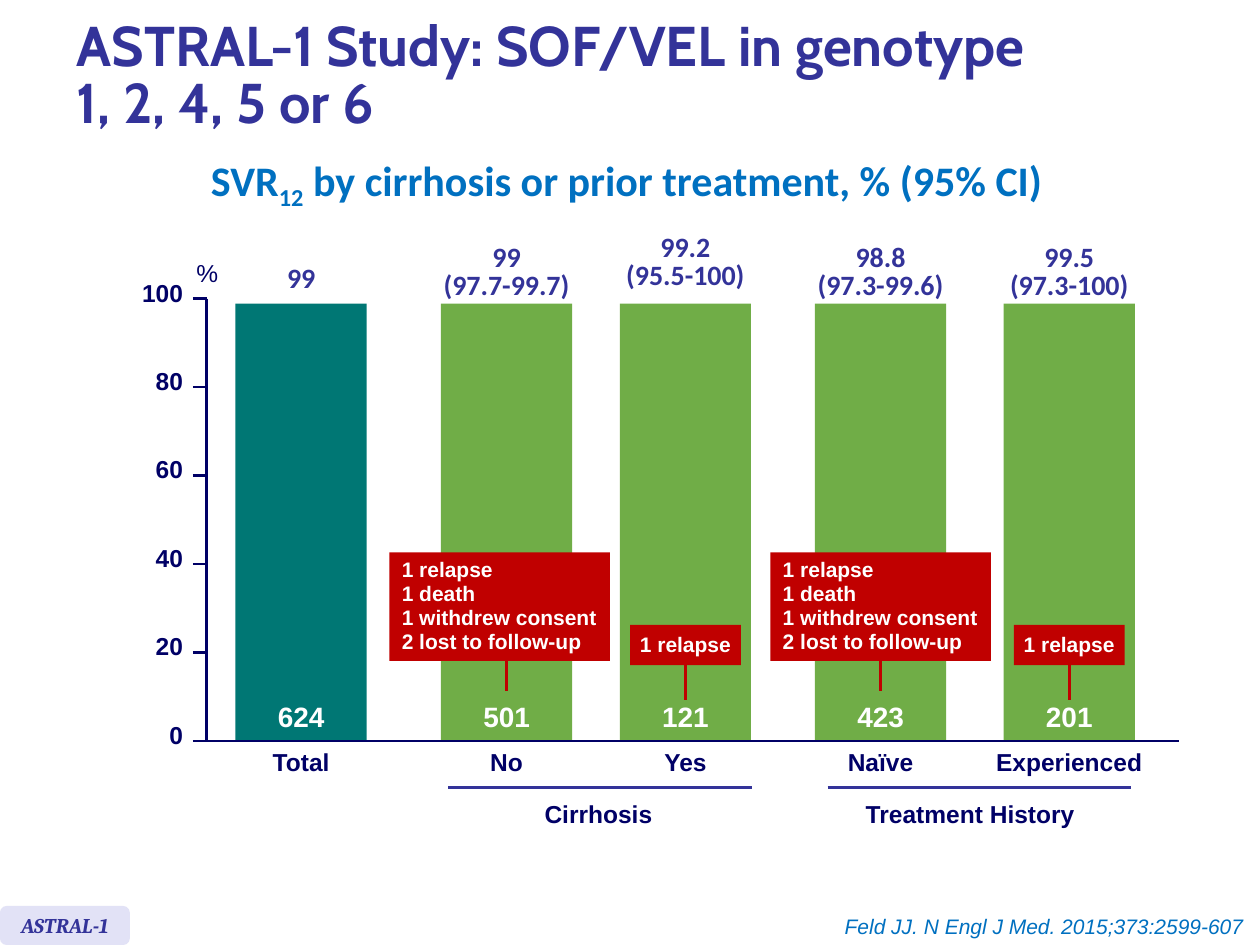
"""Builds the ASTRAL-1 slide with SVR12 bars by cirrhosis and prior treatment."""
from lxml import etree
from pptx import Presentation
from pptx.dml.color import RGBColor
from pptx.enum.shapes import MSO_CONNECTOR, MSO_SHAPE
from pptx.enum.text import MSO_ANCHOR, PP_ALIGN
from pptx.oxml.ns import qn
from pptx.util import Pt

LEFT, CENTER, RIGHT = PP_ALIGN.LEFT, PP_ALIGN.CENTER, PP_ALIGN.RIGHT
MIDDLE = MSO_ANCHOR.MIDDLE
RECTANGLE, ROUNDED = MSO_SHAPE.RECTANGLE, MSO_SHAPE.ROUNDED_RECTANGLE
STRAIGHT = MSO_CONNECTOR.STRAIGHT
NAVY, INDIGO, BLUE, RED = "000066", "333399", "0070C0", "C00000"
TEAL, GREEN, LAVENDER, WHITE = "007774", "70AD47", "E2E2F6", "FFFFFF"


def color(hex_value):
    return RGBColor.from_string(hex_value)


def write(box, text, size, ink, font="Arial", align=CENTER, spacing=None,
          bold=True, italic=False, margin=0):
    frame = box.text_frame
    frame.word_wrap = False
    frame.margin_left = frame.margin_right = Pt(margin)
    frame.margin_top = frame.margin_bottom = Pt(margin)
    frame.text = text
    for para in frame.paragraphs:
        para.alignment = align
        para.line_spacing = spacing
        for span in para.runs:
            span.font.name, span.font.size = font, Pt(size)
            span.font.bold, span.font.italic = bold, italic
            span.font.color.rgb = color(ink)
    return frame


deck = Presentation()
deck.slide_width, deck.slide_height = Pt(720), Pt(540)
page = deck.slides.add_slide(deck.slide_layouts[5])
shapes = page.shapes

title = shapes.title
title.left, title.top, title.width, title.height = Pt(36.7), Pt(5.8), Pt(657.4), Pt(77)
frame = write(title, "ASTRAL-1 Study: SOF/VEL in genotype\v1, 2, 4, 5 or 6", 32, INDIGO,
              "Cabin", LEFT, 0.85)
frame.word_wrap = True
frame.margin_left = frame.margin_right = Pt(7.2)
frame.vertical_anchor = MIDDLE

heading = shapes.add_textbox(Pt(109.4), Pt(102.2), Pt(497.5), Pt(25.2))
frame = write(heading, "SVR", 24, BLUE, "Calibri", spacing=Pt(15.2), margin=3.6)
para = frame.paragraphs[0]
for text, baseline in (("12", "-25000"), (" by cirrhosis or prior treatment, % (95% CI)", "0")):
    span = para.add_run()
    span.text = text
    span.font.name, span.font.size, span.font.bold = "Calibri", Pt(24), True
    span.font.color.rgb = color(BLUE)
    span._r.get_or_add_rPr().set("baseline", baseline)

AXIS_X, AXIS_TOP, AXIS_BOTTOM, AXIS_END, TICK = 118.1, 170.6, 423.4, 673.9, 7.9
BAR_WIDTH, BAR_TOP = 75, 173.5
CATEGORY_WIDTH, GROUP_WIDTH = 92, 130
LONG_NOTE = "1 relapse\n1 death\n1 withdrew consent\n2 lost to follow-up"
SHORT_NOTE = "1 relapse"

bars = [
    ("Total", 172.1, TEAL, "99", 149, "624", None, 0),
    ("No", 289.5, GREEN, "99\n(97.7-99.7)", 139.7, "501", LONG_NOTE, -4),
    ("Yes", 391.7, GREEN, "99.2\n(95.5-100)", 133.9, "121", SHORT_NOTE, 0),
    ("Naïve", 503.2, GREEN, "98.8\n(97.3-99.6)", 139.7, "423", LONG_NOTE, 0),
    ("Experienced", 611, GREEN, "99.5\n(97.3-100)", 139.7, "201", SHORT_NOTE, 0),
]
lines = [(AXIS_X, AXIS_TOP, AXIS_X, AXIS_BOTTOM, NAVY),
         (AXIS_X, AXIS_BOTTOM, AXIS_END, AXIS_BOTTOM, NAVY)]
connectors = []

for category, center, fill, value, value_top, count, note, shift in bars:
    bar = shapes.add_shape(RECTANGLE, Pt(center - BAR_WIDTH / 2), Pt(BAR_TOP),
                           Pt(BAR_WIDTH), Pt(AXIS_BOTTOM - BAR_TOP))
    bar.shadow.inherit = False
    bar.fill.solid()
    bar.fill.fore_color.rgb = color(fill)
    bar.line.fill.background()

    two_lines = "\n" in value
    value_width, value_height = (80, 33) if two_lines else (24, 19.4)
    box = shapes.add_textbox(Pt(center - value_width / 2), Pt(value_top),
                             Pt(value_width), Pt(value_height))
    write(box, value, 16, INDIGO, "Calibri", spacing=Pt(16.2) if two_lines else None)

    box = shapes.add_textbox(Pt(center - CATEGORY_WIDTH / 2), Pt(427),
                             Pt(CATEGORY_WIDTH), Pt(17.3))
    write(box, category, 14, NAVY)

    box = shapes.add_textbox(Pt(center - 33.8), Pt(398.2), Pt(67.6), Pt(25.2))
    write(box, count, 16, WHITE, spacing=0.9).vertical_anchor = MIDDLE

for value in range(0, 101, 20):
    y = AXIS_BOTTOM - (AXIS_BOTTOM - AXIS_TOP) * value / 100
    lines.append((AXIS_X - TICK, y, AXIS_X, y, NAVY))
    box = shapes.add_textbox(Pt(74.6), Pt(y - 12), Pt(30), Pt(17.3))
    write(box, str(value), 14, NAVY, align=RIGHT)

box = shapes.add_textbox(Pt(105.1), Pt(144), Pt(27.4), Pt(24.5))
write(box, "%", 14, NAVY, align=LEFT, bold=False, margin=7.2).margin_top = Pt(3.6)

for group, left, center in (("Cirrhosis", 256.3, 342), ("Treatment History", 473, 554.4)):
    lines.append((left, 450, left + 173.5, 450, INDIGO))
    box = shapes.add_textbox(Pt(center - GROUP_WIDTH / 2), Pt(456.5), Pt(GROUP_WIDTH), Pt(17.3))
    write(box, group, 14, NAVY)

for x1, y1, x2, y2, ink in lines:
    connectors.append((shapes.add_connector(STRAIGHT, Pt(x1), Pt(y1), Pt(x2), Pt(y2)), ink))

for category, center, fill, value, value_top, count, note, shift in bars:
    if note is None:
        continue
    is_long = note == LONG_NOTE
    note_width, top, height, end = (126, 315.7, 62, 394.6) if is_long else (63.4, 357.1, 23, 400.3)
    callout = shapes.add_shape(RECTANGLE, Pt(center + shift - note_width / 2), Pt(top),
                               Pt(note_width), Pt(height))
    callout.shadow.inherit = False
    callout.fill.solid()
    callout.fill.fore_color.rgb = color(RED)
    callout.line.fill.background()
    frame = write(callout, note, 12, WHITE, align=LEFT if is_long else CENTER,
                  spacing=0.95, margin=7.2)
    frame.vertical_anchor = MIDDLE
    leader = shapes.add_connector(STRAIGHT, Pt(center), Pt(top + height), Pt(center), Pt(end))
    if shift == 0:
        leader.begin_connect(callout, 2)
    connectors.append((leader, RED))

for connector, ink in connectors:
    connector.line.color.rgb = color(ink)
    connector.line.width = Pt(1.5)
    etree.SubElement(connector._element.spPr, qn("a:effectLst"))

badge = shapes.add_shape(ROUNDED, Pt(0), Pt(517.7), Pt(74.2), Pt(22.3))
badge.shadow.inherit = False
badge.fill.solid()
badge.fill.fore_color.rgb = color(LAVENDER)
badge.line.fill.background()
write(badge, "ASTRAL-1", 12, INDIGO, "Cambria", italic=True).vertical_anchor = MIDDLE

citation = shapes.add_textbox(Pt(470.2), Pt(518.4), Pt(247.7), Pt(21.6))
frame = write(citation, "Feld JJ. N Engl J Med. 2015;373:2599-607", 12, BLUE, align=RIGHT,
              bold=False, italic=True, margin=3.6)
frame.margin_left = frame.margin_right = Pt(7.2)

deck.save("out.pptx")
